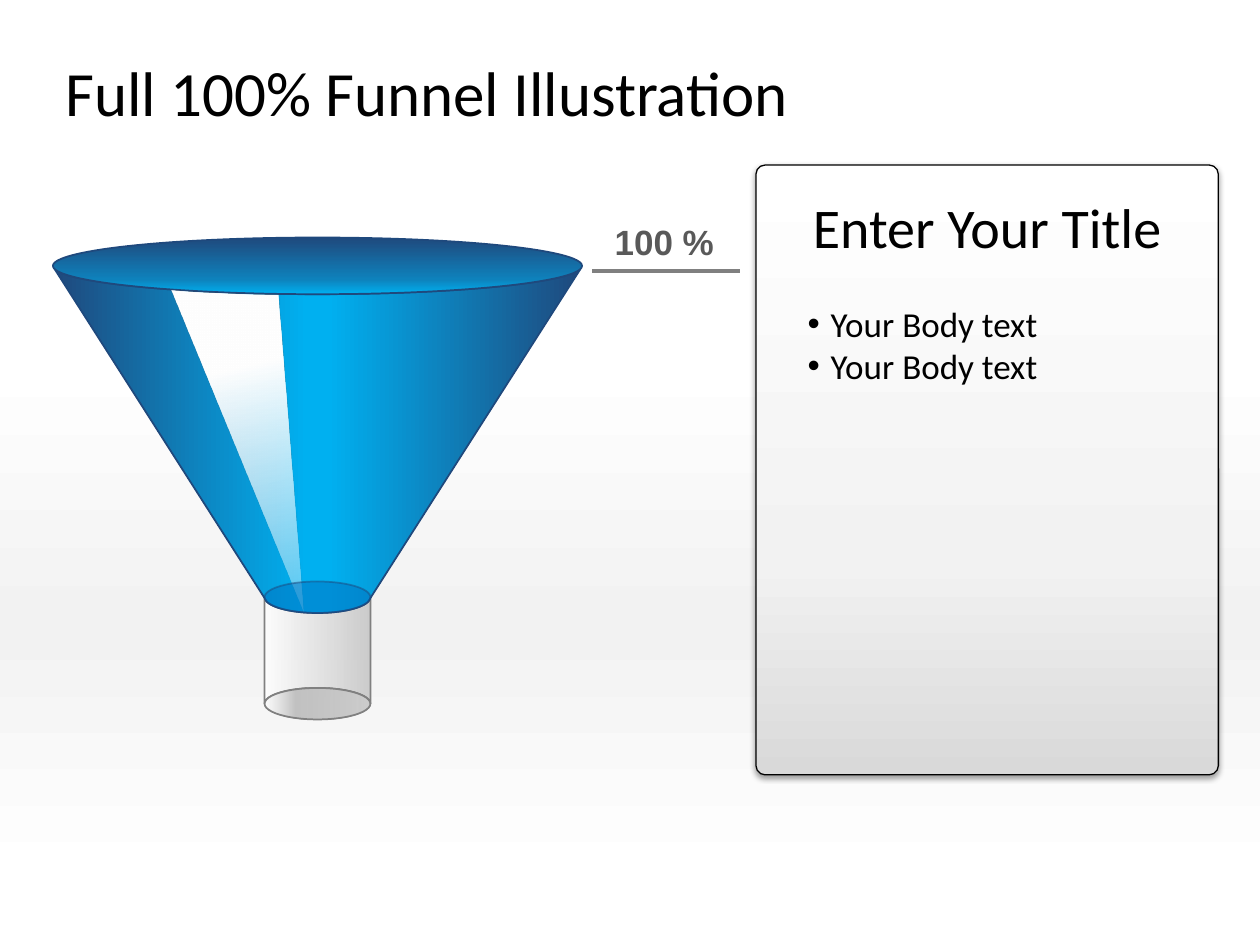
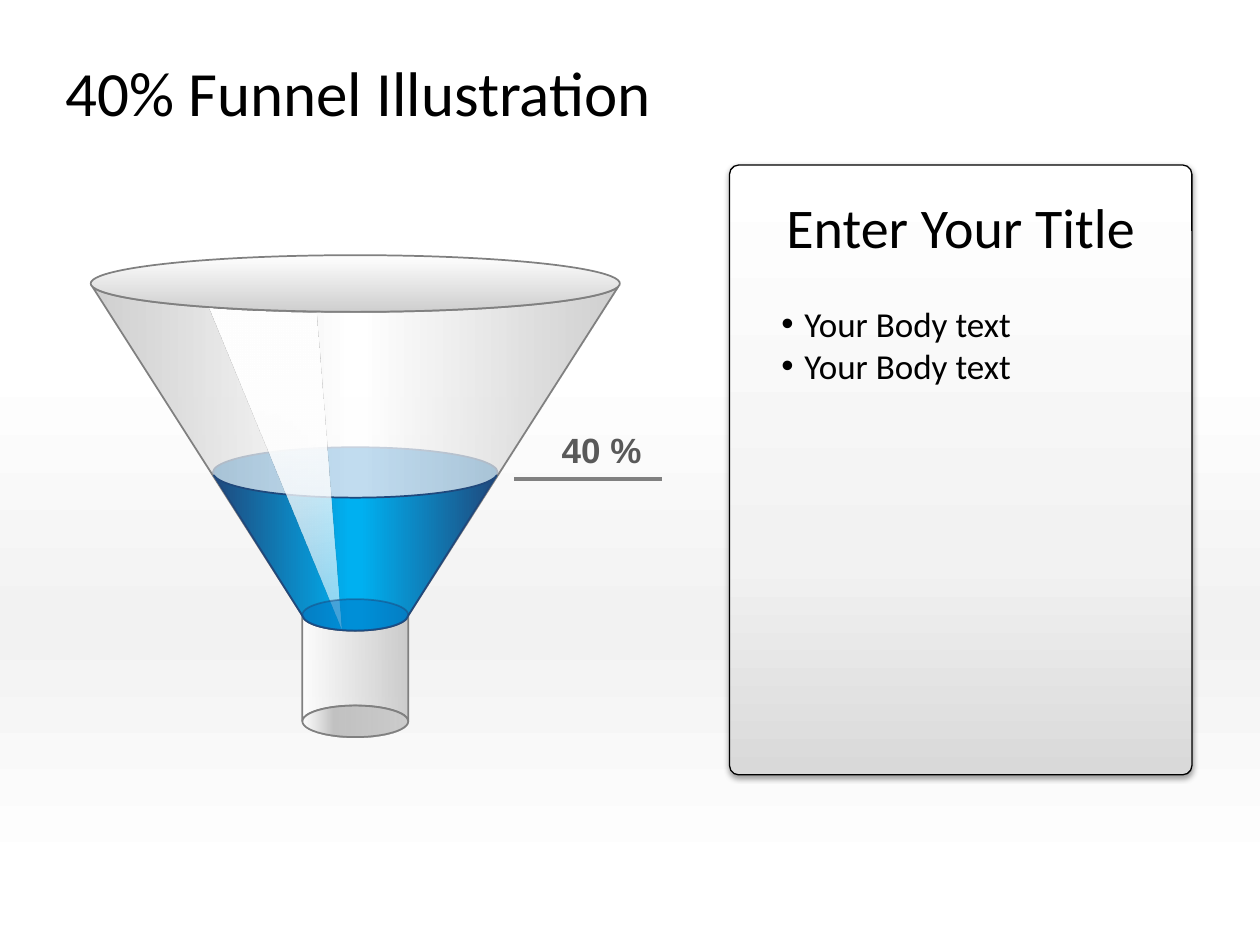
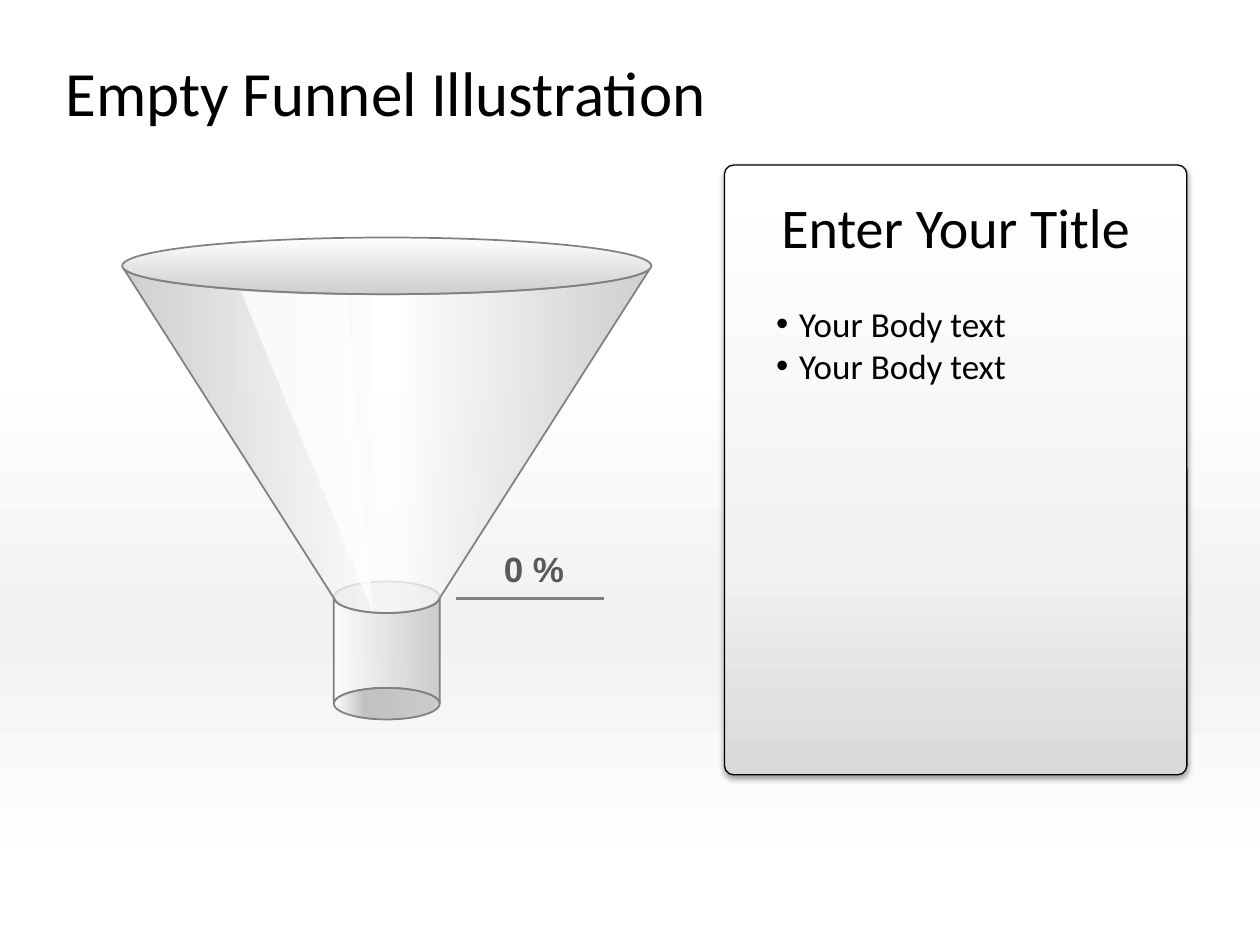
from math import cos, radians, sin, tan

from lxml.etree import SubElement
from pptx import Presentation
from pptx.dml.color import RGBColor
from pptx.enum.shapes import MSO_CONNECTOR, MSO_SHAPE
from pptx.enum.text import MSO_ANCHOR, PP_ALIGN
from pptx.oxml.ns import qn
from pptx.util import Inches, Pt

PX = 9144
WHITE = RGBColor(0xFF, 0xFF, 0xFF)
PALE = RGBColor(0xF2, 0xF2, 0xF2)
LIGHT = RGBColor(0xD9, 0xD9, 0xD9)
SILVER = RGBColor(0xBF, 0xBF, 0xBF)
OUTLET = RGBColor(0xC2, 0xC2, 0xC2)
GRAY = RGBColor(0x80, 0x80, 0x80)
DARK = RGBColor(0x59, 0x59, 0x59)
BLACK = RGBColor(0x00, 0x00, 0x00)
NAVY = RGBColor(0x1F, 0x49, 0x7D)
BLUE = RGBColor(0x00, 0x70, 0xC0)
MID_BLUE = RGBColor(0x0E, 0x82, 0xBC)
SKY = RGBColor(0x00, 0xB0, 0xF0)

DOWN, RIGHT, SHINE_ANGLE = 270, 0, 283.3
BACKDROP = [(38, WHITE, 100), (66, PALE, 100), (93, WHITE, 100)]
PANEL = [(0, WHITE, 100), (65, PALE, 100), (100, LIGHT, 100)]
TUBE = [(0, WHITE, 75), (100, SILVER, 75)]
OUTLET_FILL = [(0, WHITE, 75), (29, OUTLET, 100), (100, SILVER, 75)]
GLASS = [(0, SILVER, 75), (48, WHITE, 75), (52, WHITE, 75), (100, SILVER, 75)]
LIQUID = [(0, NAVY, 100), (48, SKY, 100), (52, SKY, 100), (100, NAVY, 100)]
LIQUID_RIM = [(0, NAVY, 100), (74, MID_BLUE, 100), (100, SKY, 100)]


def arc(oval, start, end, pieces=2):
    cx, cy, rx, ry = oval
    step = radians(end - start) / pieces
    k = 4 / 3 * tan(step / 4)

    def point(a, pull=0):
        return (cx + rx * (cos(a) - pull * sin(a)), cy + ry * (sin(a) + pull * cos(a)))

    a = radians(start)
    segments = [[point(a)]]
    for _ in range(pieces):
        segments.append([point(a, k), point(a + step, -k), point(a + step)])
        a += step
    return segments


class Deck:
    def __init__(self):
        self.prs = Presentation()
        self.prs.slide_width, self.prs.slide_height = Inches(10), Inches(7.5)

    def slide(self, title):
        self.s = self.prs.slides.add_slide(self.prs.slide_layouts[6])
        self.gradient(self.s.background.fill, self.s._element, BACKDROP, DOWN)
        self.text(title, 42, 25, 625, 95, "Calibri", 36, BLACK, wrap=True)

    def alpha(self, color, percent):
        if percent < 100:
            SubElement(color, qn("a:alpha"), val=str(percent * 1000))

    def gradient(self, fill, owner, stops, angle):
        fill.gradient()
        fill.gradient_angle = angle
        gs_list = owner.find(".//" + qn("a:gsLst"))
        gs_list.clear()
        for pos, color, opacity in stops:
            gs = SubElement(gs_list, qn("a:gs"), pos=str(pos * 1000))
            self.alpha(SubElement(gs, qn("a:srgbClr"), val=str(color)), opacity)

    def solid(self, fill, owner, color, opacity):
        fill.solid()
        fill.fore_color.rgb = color
        self.alpha(owner.find(".//" + qn("a:srgbClr")), opacity)

    def paint(self, sp, fill, angle=RIGHT, line=None, width=1.0, line_opacity=100):
        sp.shadow.inherit = False
        if isinstance(fill, list):
            self.gradient(sp.fill, sp._element, fill, angle)
        else:
            self.solid(sp.fill, sp._element, *fill)
        if line is None:
            sp.line.fill.background()
        else:
            sp.line.width = Pt(width)
            self.solid(sp.line.fill, sp.line._get_or_add_ln(), line, line_opacity)

    def font(self, p, name, size, color, bold=False):
        for r in p.runs:
            r.font.name, r.font.size, r.font.bold = name, Pt(size), bold
            r.font.color.rgb = color

    def text(self, text, x, y, w, h, name, size, color, bold=False, wrap=False):
        sp = self.s.shapes.add_textbox(x * PX, y * PX, w * PX, h * PX)
        tf = sp.text_frame
        tf.word_wrap = wrap
        tf.vertical_anchor = MSO_ANCHOR.MIDDLE if wrap else MSO_ANCHOR.TOP
        tf.text = text
        self.font(tf.paragraphs[0], name, size, color, bold)

    def oval(self, oval, fill, angle=RIGHT, line=GRAY, line_opacity=100):
        cx, cy, rx, ry = oval
        box = [round(v * PX) for v in (cx - rx, cy - ry, 2 * rx, 2 * ry)]
        sp = self.s.shapes.add_shape(MSO_SHAPE.OVAL, *box)
        self.paint(sp, fill, angle, line, line_opacity=line_opacity)

    def outline(self, segments, fill, angle=RIGHT, line=None):
        start, *rest = [(x * PX, y * PX) for points in segments for x, y in points]
        builder = self.s.shapes.build_freeform(*start)
        builder.add_line_segments(rest, close=True)
        sp = builder.convert_to_shape()
        lines = iter(sp._element.findall(".//" + qn("a:lnTo")))
        for points in segments[1:]:
            group = [next(lines) for _ in points]
            if len(group) == 3:
                first, *others = group
                curve = first.makeelement(qn("a:cubicBezTo"))
                first.addprevious(curve)
                for node in group:
                    curve.append(node[0])
                    node.getparent().remove(node)
        self.paint(sp, fill, angle, line)

    def cone(self, top, spout, fill, line):
        self.outline(arc(top, 173.5, 6.5) + arc(spout, 18, 162), fill, RIGHT, line)

    def funnel(self, cx, y, shine, full=False, level=None):
        rim = (cx, y + 23, 210, 22.5)
        spout = (cx, y + 286, 42, 12.5)
        outlet = (cx, y + 370.5, 42, 12.5)
        empty = not full and level is None
        if empty:
            self.oval(spout, (SILVER, 54))
        if level:
            surface = (cx, level, 113, 20)
            self.oval(surface, (BLUE, 100), line=NAVY)
        self.outline(arc(spout, 180, 0) + arc(outlet, 0, -180), TUBE, line=GRAY)
        self.oval(outlet, OUTLET_FILL)
        line = NAVY if full else GRAY
        self.cone(rim, spout, LIQUID if full else GLASS, line)
        self.oval(rim, LIQUID_RIM if full else TUBE, DOWN, line)
        if level:
            self.cone(surface, spout, LIQUID, NAVY)
        edge = arc((cx, y + 23, 210, 24), 123.5, 98.5, pieces=1)
        self.outline(edge + [[(cx - 11, y + 298)]], shine, SHINE_ANGLE)
        if not empty:
            self.oval(spout, (BLUE, 50), line=NAVY, line_opacity=51)

    def label(self, text, x, y, indent, w):
        line = self.s.shapes.add_connector(
            MSO_CONNECTOR.STRAIGHT, x * PX, y * PX, (x + 117) * PX, y * PX)
        line.line.color.rgb = GRAY
        line.line.width = Pt(2.25)
        SubElement(line._element.spPr, qn("a:effectLst"))
        self.text(text, x + indent, y - 45, w, 44, "Arial", 20, DARK, bold=True)

    def panel(self, x, title, items):
        sp = self.s.shapes.add_shape(
            MSO_SHAPE.ROUNDED_RECTANGLE, x * PX, 131 * PX, 367 * PX, 484 * PX)
        sp.adjustments[0] = 0.02
        self.paint(sp, PANEL, DOWN, BLACK, 0.75)
        effects = sp._element.spPr.find(qn("a:effectLst"))
        shadow = SubElement(effects, qn("a:outerShdw"), blurRad="40000",
                            dist="20000", dir="5400000", rotWithShape="0")
        self.alpha(SubElement(shadow, qn("a:srgbClr"), val=str(BLACK)), 38)
        tf = sp.text_frame
        tf.word_wrap = True
        tf.vertical_anchor = MSO_ANCHOR.TOP
        tf.margin_left = tf.margin_right = tf.margin_top = tf.margin_bottom = 20 * PX
        tf.text = title
        p = tf.paragraphs[0]
        p.alignment = PP_ALIGN.CENTER
        self.font(p, "Calibri", 32, BLACK)
        for i, item in enumerate(items):
            p = tf.add_paragraph()
            p.text = item
            p.alignment = PP_ALIGN.JUSTIFY
            p.space_before = Pt(0 if i else 24)
            self.font(p, "Calibri", 20, BLACK)
            pr = p._p.get_or_add_pPr()
            pr.set("marL", str(31 * PX))
            pr.set("indent", str(-12 * PX))
            SubElement(pr, qn("a:buFont"), typeface="Arial")
            SubElement(pr, qn("a:buChar"), char="•")


def main():
    deck = Deck()
    panel = ("Enter Your Title", [" Your Body text"] * 2)

    deck.slide("Full 100% Funnel Illustration")
    deck.label("100 %", 470, 215, 8, 100)
    deck.panel(600, *panel)
    deck.funnel(252, 188, [(0, WHITE, 100), (26, WHITE, 100), (100, WHITE, 30)], full=True)

    deck.slide("40% Funnel Illustration")
    deck.funnel(282, 202, [(0, WHITE, 100), (23, WHITE, 100), (100, WHITE, 50)], level=375)
    deck.panel(579, *panel)
    deck.label("40 %", 408, 380, 28, 84)

    deck.slide("Empty Funnel Illustration")
    deck.funnel(307, 188, (WHITE, 75))
    deck.label("0 %", 362, 475, 28, 68)
    deck.panel(575, *panel)

    deck.prs.save("out.pptx")


if __name__ == "__main__":
    main()
